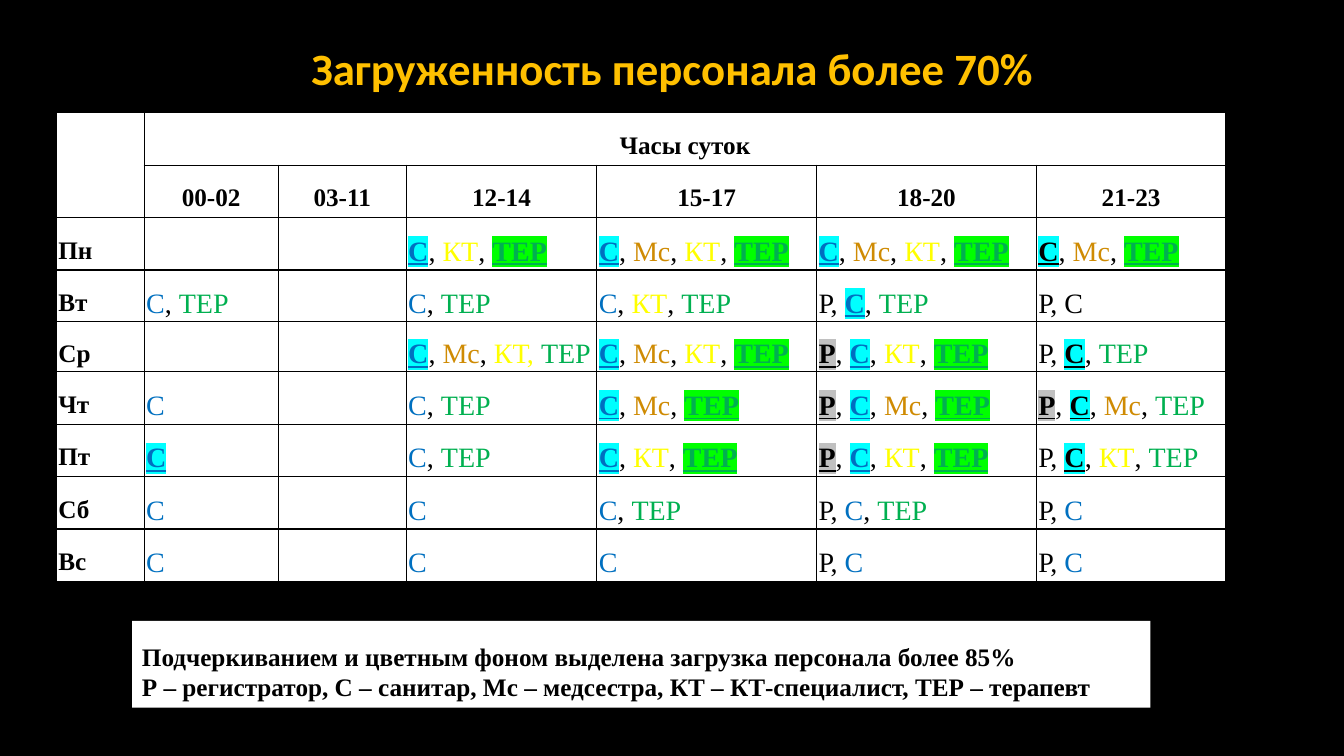
from lxml.etree import SubElement
from pptx import Presentation
from pptx.dml.color import RGBColor
from pptx.enum.shapes import MSO_SHAPE
from pptx.enum.text import MSO_ANCHOR, MSO_AUTO_SIZE, PP_ALIGN
from pptx.oxml import parse_xml
from pptx.oxml.ns import nsdecls, qn
from pptx.util import Inches, Pt

COLORS = {
    "black": "000000",
    "white": "FFFFFF",
    "amber": "FFC000",
    "blue": "0070C0",
    "ochre": "CF8B03",
    "yellow": "FFFF00",
    "green": "00B050",
    "cyan": "00FFFF",
    "lime": "00FF00",
    "gray": "C0C0C0",
}
ROLE_COLORS = {"Р": "black", "С": "blue", "Мс": "ochre", "КТ": "yellow", "ТЕР": "green"}
OVERLOAD_COLORS = {"Р": "gray", "С": "cyan", "ТЕР": "lime"}

HOURS = ["00-02", "03-11", "12-14", "15-17", "18-20", "21-23"]
WEEKEND = ["Сб", "Вс"]
LOAD = {
    "Пн": ["", "", "*С КТ *ТЕР", "*С Мс КТ *ТЕР", "*С Мс КТ *ТЕР", "*С Мс *ТЕР"],
    "Вт": ["С ТЕР", "", "С ТЕР", "С КТ ТЕР", "Р *С ТЕР", "Р С"],
    "Ср": ["", "", "*С Мс КТ ТЕР", "*С Мс КТ *ТЕР", "*Р *С КТ *ТЕР", "Р *С ТЕР"],
    "Чт": ["С", "", "С ТЕР", "*С Мс *ТЕР", "*Р *С Мс *ТЕР", "*Р *С Мс ТЕР"],
    "Пт": ["*С", "", "С ТЕР", "*С КТ *ТЕР", "*Р *С КТ *ТЕР", "Р *С КТ ТЕР"],
    "Сб": ["С", "", "С", "С ТЕР", "Р С ТЕР", "Р С"],
    "Вс": ["С", "", "С", "С", "Р С", "Р С"],
}
COLUMN_WIDTHS = [0.87, 1.33, 1.27, 1.89, 2.18, 2.18, 1.88]
ROW_HEIGHTS = [0.52, 0.52, 0.52, 0.51, 0.46, 0.52, 0.52, 0.52, 0.52]


def add_text(paragraph, text, size=18, color="black", bold=True, font="Times New Roman",
             highlight=None, align=PP_ALIGN.LEFT, spacing=1.5):
    paragraph.alignment = align
    paragraph.line_spacing = spacing
    run = paragraph.add_run()
    run.text = text
    run.font.size = Pt(size)
    run.font.bold = bold
    run.font.name = font
    run.font.color.rgb = RGBColor.from_string(COLORS[color])
    if highlight:
        run.font.underline = True
        marker = parse_xml(f'<a:highlight {nsdecls("a")}><a:srgbClr val="{COLORS[highlight]}"/></a:highlight>')
        run.font._element.find(qn("a:solidFill")).addnext(marker)


prs = Presentation()
prs.slide_width = Inches(13.33)
prs.slide_height = Inches(7.5)
slide = prs.slides.add_slide(prs.slide_layouts[6])
slide.background.fill.solid()
slide.background.fill.fore_color.rgb = RGBColor.from_string(COLORS["black"])

title = slide.shapes.add_textbox(Inches(0.92), Inches(0.4), Inches(11.5), Inches(0.6)).text_frame
title.word_wrap = True
title.vertical_anchor = MSO_ANCHOR.MIDDLE
add_text(title.paragraphs[0], "Загруженность персонала более 70%", size=32, color="amber",
         font="Calibri", align=PP_ALIGN.CENTER, spacing=0.9)

schedule = slide.shapes.add_table(len(ROW_HEIGHTS), len(COLUMN_WIDTHS), Inches(0.56), Inches(1.12),
                                  Inches(11.6), Inches(4.68)).table
schedule.first_row = False
schedule.horz_banding = False
for column, width in zip(schedule.columns, COLUMN_WIDTHS):
    column.width = Inches(width)
for row, height in zip(schedule.rows, ROW_HEIGHTS):
    row.height = Inches(height)

for cell in schedule.iter_cells():
    cell.vertical_anchor = MSO_ANCHOR.MIDDLE
    cell.margin_left = cell.margin_right = Inches(0.02)
    cell.margin_top = cell.margin_bottom = 0
    for side in ("lnL", "lnR", "lnT", "lnB"):
        border = SubElement(cell._tc.get_or_add_tcPr(), qn(f"a:{side}"), w=str(Pt(1)))
        border_fill = SubElement(border, qn("a:solidFill"))
        SubElement(border_fill, qn("a:srgbClr"), val=COLORS["black"])
    cell.fill.solid()
    cell.fill.fore_color.rgb = RGBColor.from_string(COLORS["white"])

schedule.cell(0, 0).merge(schedule.cell(1, 0))
schedule.cell(0, 1).merge(schedule.cell(0, len(HOURS)))
add_text(schedule.cell(0, 1).text_frame.paragraphs[0], "Часы суток", align=PP_ALIGN.CENTER)
for col, hours in enumerate(HOURS, start=1):
    add_text(schedule.cell(1, col).text_frame.paragraphs[0], hours, align=PP_ALIGN.CENTER)

for row, (day, shifts) in enumerate(LOAD.items(), start=2):
    add_text(schedule.cell(row, 0).text_frame.paragraphs[0], day)
    for col, (hours, staff) in enumerate(zip(HOURS, shifts), start=1):
        paragraph = schedule.cell(row, col).text_frame.paragraphs[0]
        comma_color = "black"
        for position, entry in enumerate(staff.split()):
            if position:
                add_text(paragraph, ", ", size=20, color=comma_color, bold=False)
            role = entry.lstrip("*")
            overloaded = entry.startswith("*")
            late_orderly = role == "С" and hours == "21-23" and day not in WEEKEND
            add_text(paragraph, role, size=20, bold=overloaded,
                     color="black" if late_orderly else ROLE_COLORS[role],
                     highlight=OVERLOAD_COLORS[role] if overloaded else None)
            comma_color = "yellow" if (day, hours, role) == ("Ср", "12-14", "КТ") else "black"

legend = slide.shapes.add_shape(MSO_SHAPE.RECTANGLE, Inches(1.31), Inches(6.16), Inches(10.1), Inches(0.86))
legend.shadow.inherit = False
legend.fill.solid()
legend.fill.fore_color.rgb = RGBColor.from_string(COLORS["white"])
legend.line.fill.background()
notes = legend.text_frame
notes.word_wrap = True
notes.auto_size = MSO_AUTO_SIZE.SHAPE_TO_FIT_TEXT
notes.vertical_anchor = MSO_ANCHOR.TOP
add_text(notes.paragraphs[0], "Подчеркиванием и цветным фоном выделена загрузка персонала более 85%")
add_text(notes.add_paragraph(),
         "Р – регистратор, С – санитар, Мс – медсестра, КТ – КТ-специалист, ТЕР – терапевт", spacing=1.0)

prs.save("out.pptx")
